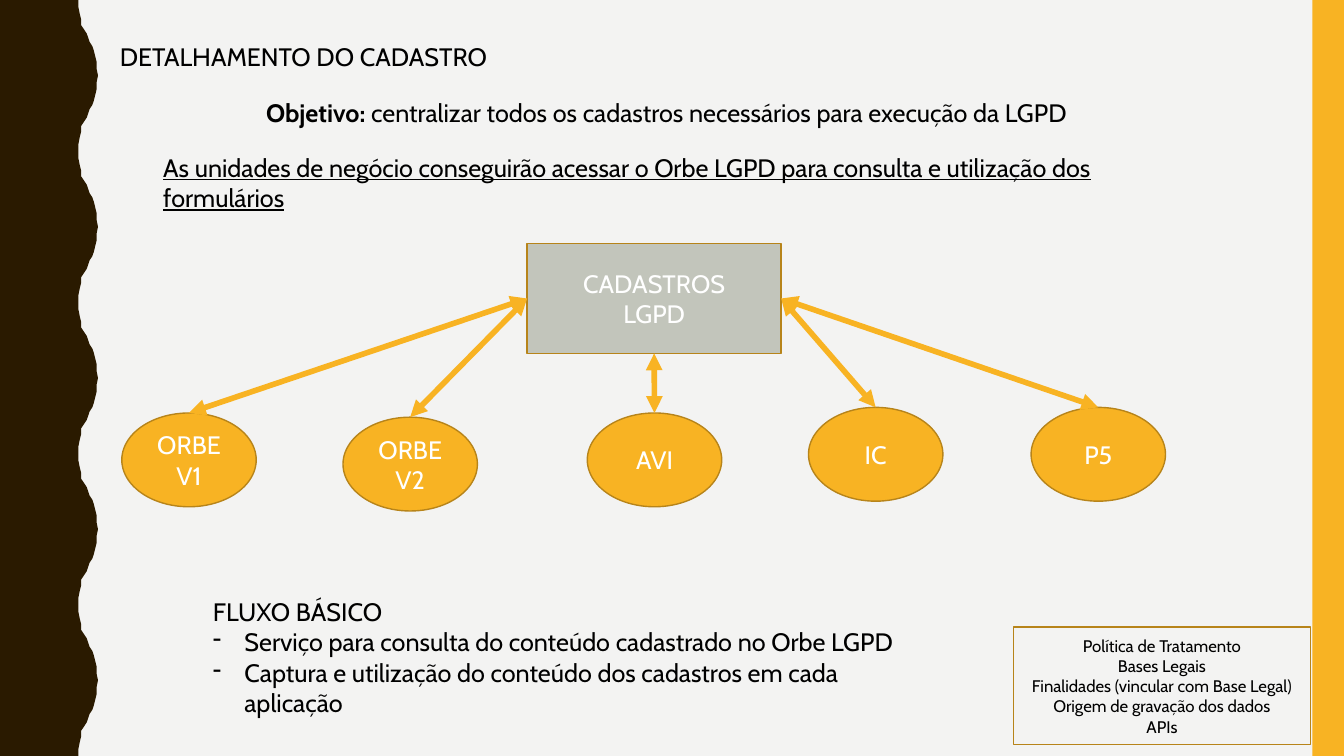
"""Builds the slide that details the LGPD register and its client systems."""
from dataclasses import dataclass

from lxml import etree
from pptx import Presentation
from pptx.dml.color import RGBColor
from pptx.enum import shapes, text
from pptx.oxml.ns import qn
from pptx.util import Pt


@dataclass(frozen=True)
class Theme:
    """Colours, font and type sizes of the slide."""
    background: str = "F3F3F2"
    wave: str = "2A1A00"
    accent: str = "F8B323"
    outline: str = "B7841A"
    hub: str = "C2C5BB"
    ink: str = "000000"
    light: str = "FFFFFF"
    font: str = "Cabin"
    body: float = 18
    small: float = 12


class Canvas:
    """Draws styled elements on one slide, with lengths in points."""

    def __init__(self, slide, theme):
        """Keep the slide and theme and paint the background."""
        self.slide, self.theme = slide, theme
        self.paint(slide.background.fill, theme.background)

    def paint(self, fill, color):
        """Fill with a solid colour, or with nothing."""
        if color is None:
            fill.background()
        else:
            fill.solid()
            fill.fore_color.rgb = RGBColor.from_string(color)

    def finish(self, shape, fill, outline=None):
        """Set fill and outline and remove the shadow."""
        shape.shadow.inherit = False
        self.paint(shape.fill, fill)
        self.paint(shape.line.fill, outline)
        if outline:
            shape.line.width = Pt(1)
        return shape

    def style(self, frame, color, size, align):
        """Format every paragraph and run of a text frame."""
        frame.word_wrap = True
        for paragraph in frame.paragraphs:
            paragraph.alignment = align
            for run in paragraph.runs:
                run.font.name = self.theme.font
                run.font.size = Pt(size)
                run.font.color.rgb = RGBColor.from_string(color)

    def box(self, kind, bounds, fill, outline=None, label="", color=None, size=None):
        """Add a preset shape with a centred label."""
        shape = self.slide.shapes.add_shape(kind, *map(Pt, bounds))
        self.finish(shape, fill, outline)
        shape.text_frame.text = label
        shape.text_frame.vertical_anchor = text.MSO_ANCHOR.MIDDLE
        self.style(shape.text_frame, color or self.theme.light,
                   size or self.theme.body, text.PP_ALIGN.CENTER)
        return shape

    def note(self, bounds, *lines):
        """Add a left-aligned text box, where each line is a list of runs."""
        frame = self.slide.shapes.add_textbox(*map(Pt, bounds)).text_frame
        for index, pieces in enumerate(lines):
            paragraph = frame.add_paragraph() if index else frame.paragraphs[0]
            for piece in pieces:
                paragraph.add_run().text = piece
        self.style(frame, self.theme.ink, self.theme.body, text.PP_ALIGN.LEFT)
        return frame.paragraphs

    def bullet(self, paragraph, indent=22.5):
        """Give a paragraph a hanging dash."""
        properties = paragraph._p.get_or_add_pPr()
        properties.set("marL", str(Pt(indent)))
        properties.set("indent", str(-Pt(indent)))
        etree.SubElement(properties, qn("a:buChar")).set("char", "-")

    def arrow(self, start, start_site, end, end_site):
        """Join two shapes with a double-headed arrow."""
        link = self.slide.shapes.add_connector(shapes.MSO_CONNECTOR.STRAIGHT, 0, 0, 0, 0)
        link.begin_connect(start, start_site)
        link.end_connect(end, end_site)
        self.paint(link.line.fill, self.theme.accent)
        link.line.width = Pt(4)
        for end_name in ("a:headEnd", "a:tailEnd"):
            etree.SubElement(link.line._ln, qn(end_name)).set("type", "triangle")
        etree.SubElement(link._element.spPr, qn("a:effectLst"))

    def wave(self, period, cycles):
        """Draw the left band, whose edge repeats one curve."""
        quarter = [(56, 0), (56.4, 5), (57, 10), (57.8, 14.5), (58.5, 18),
                   (60, 21), (61.5, 24), (62.8, 27)]
        rising = quarter + [(125.6 - x, period / 2 - y) for x, y in quarter[-2::-1]]
        cycle = rising + [(x, period - y) for x, y in rising[-2::-1]]
        edge = [(x, y + period * turn) for turn in range(cycles) for x, y in cycle]
        outline = self.slide.shapes.build_freeform(0, 0, scale=Pt(1))
        outline.add_line_segments(edge + [(0, period * cycles)], close=True)
        self.finish(outline.convert_to_shape(), self.theme.wave)


def main():
    """Compose the slide and save it."""
    deck = Presentation()
    deck.slide_width, deck.slide_height = Pt(960), Pt(540)
    theme = Theme()
    canvas = Canvas(deck.slides.add_slide(deck.slide_layouts[6]), theme)
    rectangle, oval = shapes.MSO_SHAPE.RECTANGLE, shapes.MSO_SHAPE.OVAL

    canvas.wave(period=108, cycles=5)
    canvas.box(rectangle, (937.5, 0, 22.5, 540), theme.accent)

    canvas.note((78.5, 26, 288, 29), ["DETALHAMENTO DO CADASTRO"])
    goal = canvas.note((183, 66, 595, 29), [
        "Objetivo: ", "centralizar todos os cadastros necessários para execução da LGPD"])
    goal[0].runs[0].font.bold = True
    access = canvas.note((109.5, 105, 755, 51), [
        "As unidades de negócio conseguirão acessar o Orbe LGPD "
        "para consulta e utilização dos formulários"])
    access[0].runs[0].font.underline = True

    register = canvas.box(rectangle, (376.5, 174, 181.5, 78.5), theme.hub,
                          theme.outline, "CADASTROS\nLGPD")
    top, left, bottom, right = range(4)
    systems = [("ORBE V1", 87, 295, left), ("ORBE V2", 245, 298, left),
               ("AVI", 419.5, 295, bottom), ("IC", 577.5, 291, right),
               ("P5", 736.5, 291, right)]
    for name, x, y, side in systems:
        system = canvas.box(oval, (x, y, 96, 67), theme.accent, theme.outline, name)
        canvas.arrow(system, top, register, side)

    flow = canvas.note(
        (145, 422.5, 525, 95), ["FLUXO BÁSICO"],
        ["Serviço para consulta do conteúdo cadastrado no Orbe LGPD"],
        ["Captura e utilização do conteúdo dos cadastros em cada aplicação"])
    for step in flow[1:]:
        canvas.bullet(step)

    canvas.box(rectangle, (724, 448, 212, 84), None, theme.outline, "\n".join([
        "Política de Tratamento", "Bases Legais",
        "Finalidades (vincular com Base Legal)",
        "Origem de gravação dos dados", "APIs"]), theme.ink, theme.small)

    deck.save("out.pptx")


if __name__ == "__main__":
    main()
